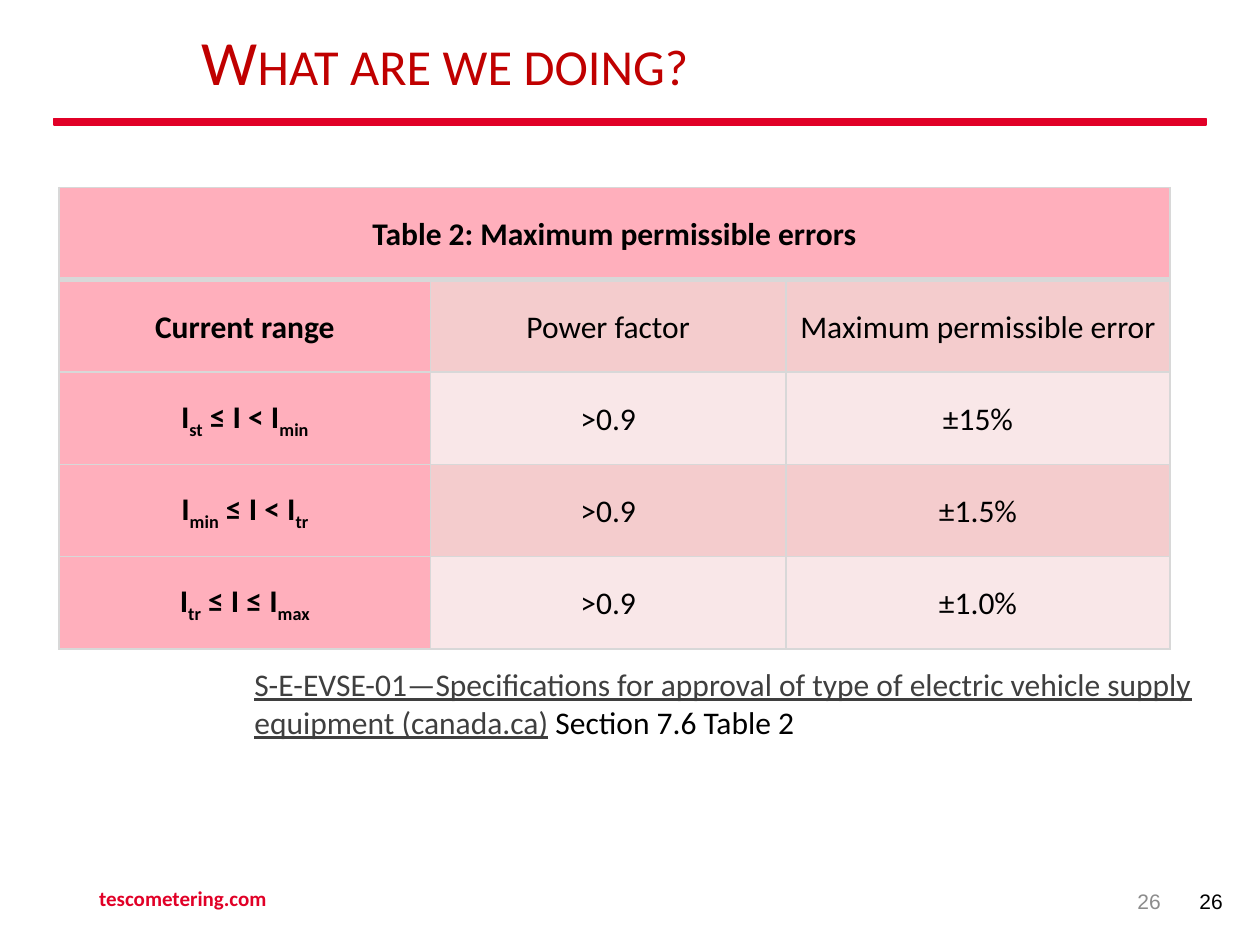
import pptx
import pptx.util
import pptx.dml.color
import pptx.enum.shapes
import pptx.enum.text
import pptx.oxml.ns
import lxml.etree

Cm = pptx.util.Cm
Pt = pptx.util.Pt
RGBColor = pptx.dml.color.RGBColor
ALIGN = pptx.enum.text.PP_ALIGN
MID = pptx.enum.text.MSO_ANCHOR.MIDDLE
TOP = pptx.enum.text.MSO_ANCHOR.TOP

RED = RGBColor(0xE1, 0x00, 0x27)
DARK = RGBColor(0xC0, 0x00, 0x00)
PINK = RGBColor(0xFF, 0xAF, 0xBC)
ROSE = RGBColor(0xF4, 0xCC, 0xCD)
PALE = RGBColor(0xF9, 0xE7, 0xE8)
EDGE = RGBColor(0xD8, 0xD8, 0xD8)
BLACK = RGBColor(0x00, 0x00, 0x00)
GREY = RGBColor(0x8C, 0x8C, 0x8C)
LINK = RGBColor(0x3F, 0x3F, 0x3F)

COLS = [7.49, 7.16, 7.75]
HIGH = 1.86
# Every second part between underscores is a subscript
ROWS = [
    ["Table 2: Maximum permissible errors", "", ""],
    ["Current range", "Power factor", "Maximum permissible error"],
    ["I_st_ ≤ I < I_min", ">0.9", "±15%"],
    ["I_min_ ≤ I < I_tr", ">0.9", "±1.5%"],
    ["I_tr_ ≤ I ≤ I_max", ">0.9", "±1.0%"],
]


def style(run, size, color, bold=False, name="Calibri"):
    font = run.font
    font.size, font.bold, font.name = Pt(size), bold, name
    font.color.rgb = color


def add_title(slide, text):
    title = slide.shapes.title
    title.left, title.top = Cm(3.81), Cm(0.38)
    title.width, title.height = Cm(20.55), Cm(1.88)
    frame = title.text_frame
    frame.text = text
    frame.auto_size = pptx.enum.text.MSO_AUTO_SIZE.NONE
    frame.vertical_anchor = MID
    line = frame.paragraphs[0]
    line.alignment, line.line_spacing = ALIGN.LEFT, 0.9
    style(line.runs[0], 36, DARK)
    line.runs[0].font._element.set("cap", "small")


def add_rule(slide):
    rule = slide.shapes.add_shape(
        pptx.enum.shapes.MSO_SHAPE.RECTANGLE,
        Cm(1.09), Cm(2.39), Cm(23.22), Cm(0.13))
    rule.shadow.inherit = False
    rule.fill.solid()
    rule.fill.fore_color.rgb = RED
    rule.line.color.rgb = RED
    rule.line.width = Pt(1)


def add_text(slide, box, text, size, color, anchor=MID,
             align=ALIGN.LEFT, **look):
    frame = slide.shapes.add_textbox(*map(Cm, box)).text_frame
    frame.word_wrap = True
    frame.vertical_anchor = anchor
    frame.text = text
    line = frame.paragraphs[0]
    line.alignment = align
    style(line.runs[0], size, color, **look)
    return line


def add_edge(cell, side, width):
    props = cell._tc.get_or_add_tcPr()
    qn = pptx.oxml.ns.qn
    edge = lxml.etree.SubElement(props, qn("a:ln" + side), w=str(Pt(width)))
    fill = lxml.etree.SubElement(edge, qn("a:solidFill"))
    lxml.etree.SubElement(fill, qn("a:srgbClr"), val=str(EDGE))


def fill_cell(cell, text, fill, bold, after, base):
    for side in "LRTB":
        add_edge(cell, side, base if side == "B" else 1)
    cell.fill.solid()
    cell.fill.fore_color.rgb = fill
    cell.vertical_anchor = MID
    cell.margin_left = cell.margin_right = Cm(0.2)
    cell.margin_top = cell.margin_bottom = Cm(0.2)
    line = cell.text_frame.paragraphs[0]
    line.alignment, line.line_spacing = ALIGN.CENTER, 1.07
    line.space_after = Pt(after)
    for i, part in enumerate(text.split("_") if text else []):
        run = line.add_run()
        run.text = part
        style(run, 18, BLACK, bold)
        if i % 2:
            run.font._element.set("baseline", "-25000")


def add_grid(slide):
    table = slide.shapes.add_table(
        len(ROWS), len(COLS), Cm(1.19), Cm(3.78),
        Cm(sum(COLS)), Cm(HIGH * len(ROWS))).table
    table.first_row = table.horz_banding = False
    for col, wide in zip(table.columns, COLS):
        col.width = Cm(wide)
    table.cell(0, 0).merge(table.cell(0, len(COLS) - 1))
    for r, row in enumerate(ROWS):
        table.rows[r].height = Cm(HIGH)
        for c, text in enumerate(row):
            head = r == 0 or c == 0
            fill = PINK if head else ROSE if r % 2 else PALE
            fill_cell(table.cell(r, c), text, fill, head,
                      after=8 if r < 2 else 0, base=3 if r == 0 else 1)


def main():
    deck = pptx.Presentation()
    deck.slide_width, deck.slide_height = Cm(25.4), Cm(19.05)
    slide = deck.slides.add_slide(deck.slide_layouts[5])

    # Heading
    add_rule(slide)
    add_title(slide, "What are we doing?")

    # Error limits and their origin
    add_grid(slide)
    note = add_text(
        slide, (4.88, 13.28, 20.17, 1.8),
        "S-E-EVSE-01—Specifications for approval of type of electric "
        "vehicle supply equipment (canada.ca)", 18, LINK, TOP)
    note.runs[0].font.underline = True
    tail = note.add_run()
    tail.text = " Section 7.6 Table 2"
    style(tail, 18, BLACK)

    # Footer
    add_text(slide, (1.75, 17.6, 8.59, 1.02), "tescometering.com",
             12, RED, bold=True)
    add_text(slide, (17.93, 17.65, 5.72, 1.02), "26", 12, GREY,
             align=ALIGN.RIGHT, name="Arial")
    add_text(slide, (23.93, 17.78, 1.02, 1.27), "26", 12, BLACK, TOP,
             name="Arial")

    deck.save("out.pptx")


if __name__ == "__main__":
    main()
